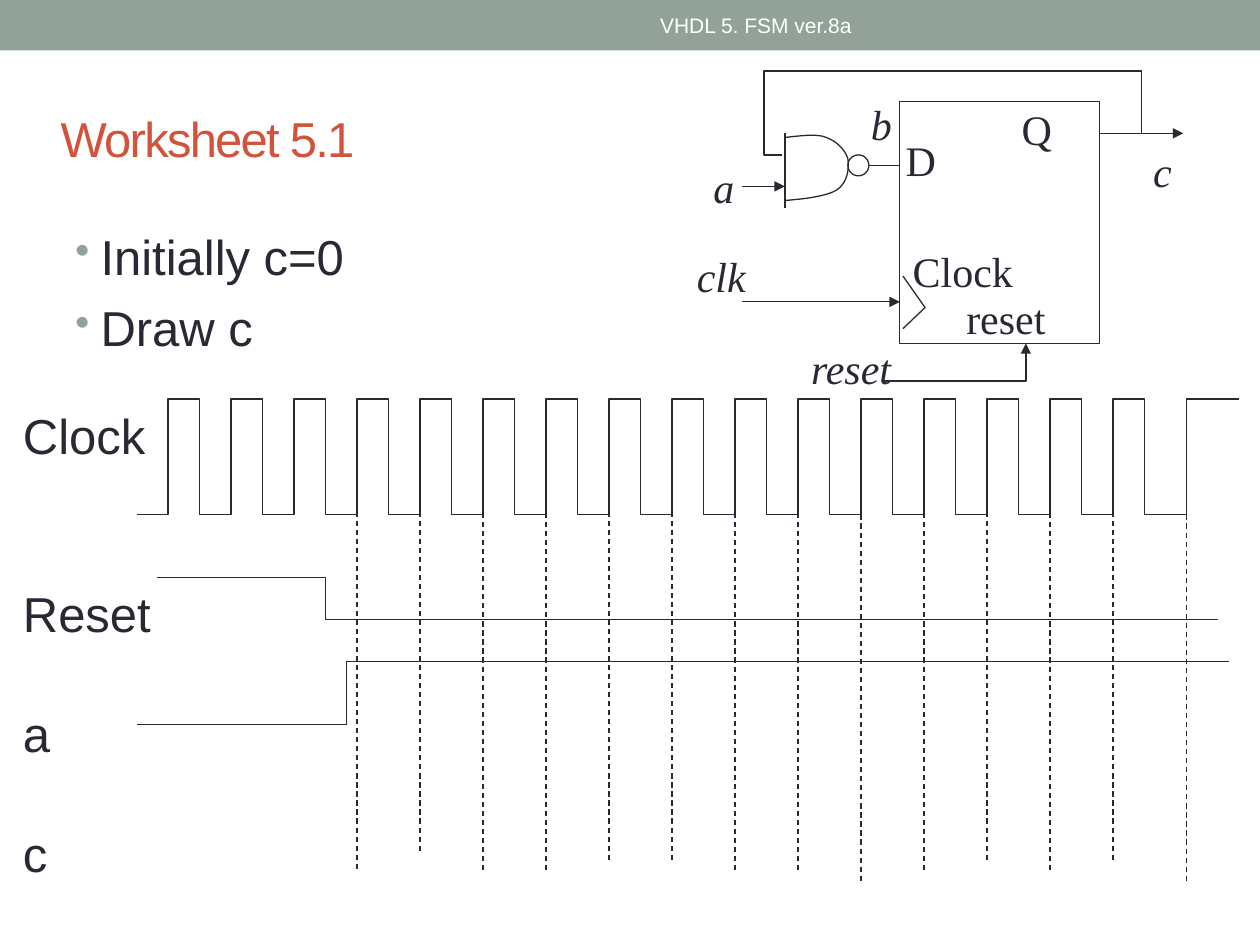
from lxml import etree
from pptx import Presentation
from pptx.dml.color import RGBColor
from pptx.enum.dml import MSO_LINE
from pptx.enum.shapes import MSO_CONNECTOR, MSO_SHAPE
from pptx.enum.text import MSO_ANCHOR, PP_ALIGN
from pptx.oxml.ns import qn
from pptx.util import Inches, Pt

SAGE = RGBColor(0x93, 0xA2, 0x99)
RUST = RGBColor(0xD2, 0x53, 0x3C)
INK = RGBColor(0x29, 0x29, 0x34)
WHITE = RGBColor(0xFF, 0xFF, 0xFF)
SANS, SERIF = "Arial", "Times New Roman"
LEFT, CENTER = PP_ALIGN.LEFT, PP_ALIGN.CENTER
TOP, MIDDLE, BOTTOM = MSO_ANCHOR.TOP, MSO_ANCHOR.MIDDLE, MSO_ANCHOR.BOTTOM
STRAIGHT, DASH = MSO_CONNECTOR.STRAIGHT, MSO_LINE.DASH
RECTANGLE, OVAL = MSO_SHAPE.RECTANGLE, MSO_SHAPE.OVAL

# The slide is a grid of 120 columns by 90 rows
COLUMNS, ROWS = 120, 90
CELL = Inches(10) / COLUMNS


def cells(*counts):
    return [round(count * CELL) for count in counts]


def style_line(line, dash=None, arrow_end=None):
    line.color.rgb = INK
    line.width = Pt(0.75)
    if dash:
        line.dash_style = dash
    if arrow_end:
        ln = line._get_or_add_ln()
        etree.SubElement(ln, qn(f"a:{arrow_end}"), type="triangle")


def add_line(slide, start, end, dash=None, arrow_end=None):
    connector = slide.shapes.add_connector(STRAIGHT, *cells(*start, *end))
    style_line(connector.line, dash, arrow_end)
    etree.SubElement(connector._element.spPr, qn("a:effectLst"))


def add_path(slide, points, arrow_end=None):
    corners = [cells(*point) for point in points]
    builder = slide.shapes.build_freeform(*corners[0])
    builder.add_line_segments(corners[1:], close=False)
    path = builder.convert_to_shape()
    path.fill.background()
    path.shadow.inherit = False
    style_line(path.line, arrow_end=arrow_end)


def add_outline(slide, kind, box):
    outline = slide.shapes.add_shape(kind, *cells(*box))
    outline.fill.background()
    outline.shadow.inherit = False
    style_line(outline.line)


def add_text(slide, box, lines, size, color=INK, font=SANS, italic=False,
             align=LEFT, anchor=TOP, wrap=True):
    """Write one paragraph per line and return the paragraphs."""
    frame = slide.shapes.add_textbox(*cells(*box)).text_frame
    frame.word_wrap = wrap
    frame.vertical_anchor = anchor
    for index, words in enumerate(lines):
        paragraph = frame.add_paragraph() if index else frame.paragraphs[0]
        paragraph.alignment = align
        run = paragraph.add_run()
        run.text = words
        run.font.size = Pt(size)
        run.font.name = font
        run.font.italic = italic
        run.font.color.rgb = color
    return frame.paragraphs


def header(slide, left, top, width, height):
    band = slide.shapes.add_shape(RECTANGLE, *cells(left, top, width, height))
    band.fill.solid()
    band.fill.fore_color.rgb = SAGE
    band.line.fill.background()
    band.shadow.inherit = False
    add_text(slide, (left + 45, top, 54, height), ["VHDL 5. FSM ver.8a"],
             12, WHITE, align=CENTER, anchor=MIDDLE)


def introduction(slide, left, top, width, height):
    title, = add_text(slide, (left, top, width, 13), ["Worksheet 5.1"],
                      28, RUST, anchor=BOTTOM)
    title.runs[0].font._element.set("spc", "-100")

    tasks = add_text(slide, (left + 1.4, top + 17.5, width, height - 17.5),
                     ["Initially c=0", "Draw c"], 28)
    for task in tasks:
        task.space_before = Pt(7)
        properties = task._p.get_or_add_pPr()
        properties.set("marL", str(Inches(0.2)))
        properties.set("indent", str(-Inches(0.2)))
        bullet_color = etree.SubElement(properties, qn("a:buClr"))
        etree.SubElement(bullet_color, qn("a:srgbClr"), val=str(SAGE))
        etree.SubElement(properties, qn("a:buSzPct"), val="85000")
        etree.SubElement(properties, qn("a:buChar"), char="•")


def curve(start, *segments, steps=8):
    """Points along a chain of cubic curves, each (control, control, end)."""
    points = [start]
    for handle1, handle2, end in segments:
        for t in (step / steps for step in range(1, steps + 1)):
            u = 1 - t
            points.append(tuple(
                u**3 * a + 3 * u * u * t * b + 3 * u * t * t * c + t**3 * d
                for a, b, c, d in zip(start, handle1, handle2, end)))
        start = end
    return points


def circuit(slide, left, top):
    def at(x, y):
        return left + x, top + y

    def route(points, arrow_end=None):
        add_path(slide, [at(*point) for point in points], arrow_end)

    # Flip-flop with its clock edge mark
    ff_left, ff_top, ff_width, ff_height = 20.7, 3.7, 19, 23
    ff_right, ff_bottom = ff_left + ff_width, ff_top + ff_height
    add_outline(slide, RECTANGLE, (*at(ff_left, ff_top), ff_width, ff_height))
    route([(21, 20.3), (23.1, 23.3), (21, 25.3)])

    # NAND gate
    gate = 9.75
    route(curve((gate, 7.1),
                ((11.2, 6.95), (12.8, 6.7), (13.7, 7.1)),
                ((14.7, 7.45), (15.5, 8.3), (15.75, 9.1)),
                ((15.9, 10), (15.75, 11.4), (14.7, 12.1)),
                ((13.7, 12.7), (11.7, 12.95), (gate, 13.1))))
    add_line(slide, at(gate, 6.7), at(gate, 13.8))
    add_outline(slide, OVAL, (*at(15.75, 8.75), 2, 2))

    # Wires: gate output, input a, output c, clock
    for start, end, row, arrow_end in [(17.75, ff_left, 9.75, None),
                                       (5.7, gate, 11.75, "tailEnd"),
                                       (ff_right, 47.7, 6.7, "tailEnd"),
                                       (5.7, ff_left, 22.75, "tailEnd")]:
        add_line(slide, at(start, row), at(end, row), arrow_end=arrow_end)

    # Feedback from Q and the reset wire
    route([(9.5, 8.75), (7.75, 8.75), (7.75, 0.75), (43.7, 0.75),
           (43.7, 6.7), (ff_right, 6.7)])
    route([(32.7, ff_bottom), (32.7, 30.3), (19.1, 30.3)], "headEnd")

    # Signal names in italics, pin names upright: centre, top, width
    for words, center, y, width, italic in [
            ("a", 3.95, 8.75, 4.4, True), ("b", 18.95, 2.75, 4.4, True),
            ("c", 45.7, 7.3, 4.2, True), ("clk", 3.7, 17.3, 7.1, True),
            ("reset", 16.05, 26, 10.2, True), ("D", 22.7, 6.25, 5.3, False),
            ("Q", 33.75, 3.25, 5.3, False), ("Clock", 26.7, 16.8, 12, False),
            ("reset", 30.8, 21.25, 10, False)]:
        add_text(slide, (*at(center - width / 2, y), width, 6), [words], 24,
                 font=SERIF, italic=italic, align=CENTER, wrap=False)


def add_trace(slide, start, end, toggles, level, other):
    """Draw a digital signal that changes level at each toggle column."""
    points = [(start, level)]
    for column in toggles:
        points += [(column, level), (column, other)]
        level, other = other, level
    add_path(slide, points + [(end, level)])


def timing_diagram(slide, left, top):
    # Signal names
    names = add_text(slide, (left, top, 16.2, 51),
                     ["Clock", "Reset", "a", "c"], 28)
    for name, gap in zip(names[1:], (68, 35, 35)):
        name.space_before = Pt(gap)

    # Clock, reset and a
    half = 3
    first_rise, last_rise = left + 15, left + 112
    clock_toggles = [first_rise + half * i for i in range(32)] + [last_rise]
    add_trace(slide, left + 12, left + 117, clock_toggles, top + 11, top)
    add_trace(slide, left + 14, left + 115, [left + 30], top + 17, top + 21)
    add_trace(slide, left + 12, left + 116, [left + 32], top + 31, top + 25)

    # Dashed guides under the rising edges after reset
    edges = clock_toggles[6::2]
    starts = (9, 9, 10, 10, 9, 9, 10, 10, 11, 10, 9, 10, 9, 11)
    ends = (45, 43, 45, 45, 44, 44, 45, 45, 46, 45, 44, 45, 44, 46)
    for edge, start, end in zip(edges, starts, ends):
        add_line(slide, (edge, top + start), (edge, top + end), dash=DASH)


def main():
    deck = Presentation()
    deck.slide_width, deck.slide_height = cells(COLUMNS, ROWS)
    slide = deck.slides.add_slide(deck.slide_layouts[6])
    header(slide, 0, 0, COLUMNS, 4.8)
    introduction(slide, 4.6, 3.5, 60, 33)
    circuit(slide, 65, 6)
    timing_diagram(slide, 1, 38)
    deck.save("out.pptx")


if __name__ == "__main__":
    main()
